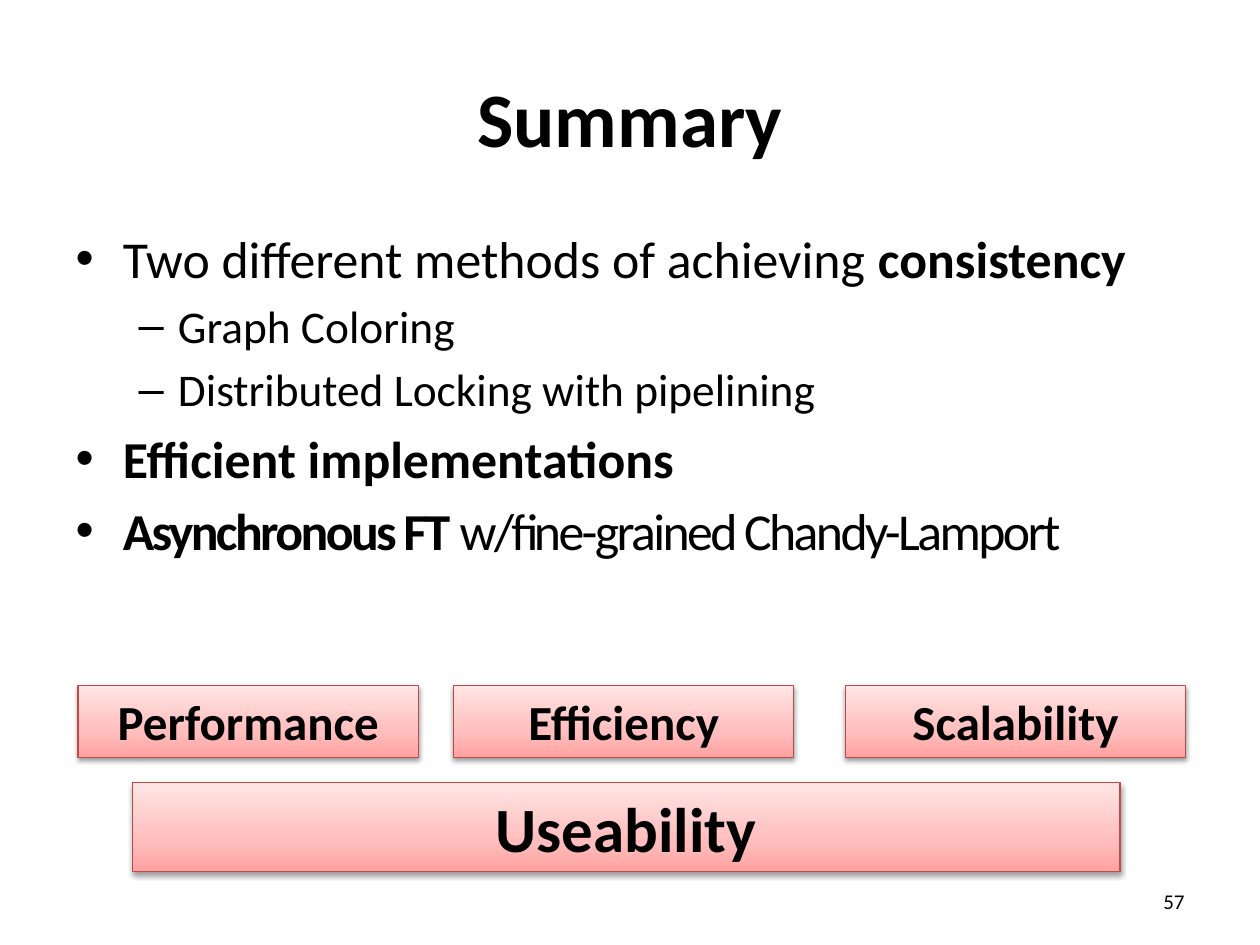
from copy import deepcopy

from lxml.etree import SubElement
from pptx import Presentation
from pptx.dml.color import RGBColor
from pptx.enum.shapes import MSO_SHAPE as Shape
from pptx.enum.text import MSO_ANCHOR as Anchor, MSO_AUTO_SIZE as AutoSize, PP_ALIGN as Align
from pptx.oxml.ns import qn
from pptx.util import Inches, Pt

BLACK = RGBColor(0x00, 0x00, 0x00)
RED = RGBColor(0xBE, 0x4B, 0x48)
GRADIENT = [
    (0, RGBColor(0xFF, 0xE5, 0xE5)),
    (0.65, RGBColor(0xFF, 0xBE, 0xBD)),
    (1, RGBColor(0xFF, 0xA2, 0xA1)),
]
BULLETS = [
    (0, [("Two different methods of achieving ", False), ("consistency", True)], 0),
    (1, [("Graph Coloring", False)], 0),
    (1, [("Distributed Locking with pipelining", False)], 0),
    (0, [("Efficient implementations", True)], 0),
    (0, [("Asynchronous FT ", True), ("w/fine-grained Chandy-Lamport", False)], -1.5),
]
LEVEL_SIZES = [29.6, 25.9]
GOALS = [("Performance", 0.62), ("Efficiency", 3.6), ("Scalability", 6.71)]


def place(sp, left, top, width, height):
    sp.left, sp.top = Inches(left), Inches(top)
    sp.width, sp.height = Inches(width), Inches(height)


def format_run(r, size, bold=False):
    r.font.name = "Calibri"
    r.font.size = Pt(size)
    r.font.bold = bold
    r.font.color.rgb = BLACK


def set_text(sp, text, size, align, bold=False):
    tf = sp.text_frame
    tf.text = text
    tf.word_wrap = True
    tf.vertical_anchor = Anchor.MIDDLE
    p = tf.paragraphs[0]
    p.alignment = align
    format_run(p.runs[0], size, bold)


def fill_bullets(sp):
    tf = sp.text_frame
    tf.auto_size = AutoSize.NONE
    for i, (level, parts, spacing) in enumerate(BULLETS):
        p = tf.add_paragraph() if i else tf.paragraphs[0]
        p.level = level
        for text, bold in parts:
            r = p.add_run()
            r.text = text
            format_run(r, LEVEL_SIZES[level], bold)
            if spacing:
                r.font._element.set("spc", str(int(spacing * 100)))


def add_gradient(sp):
    sp.fill.gradient()
    sp.fill.gradient_angle = 270
    stops = sp._element.spPr.find(".//" + qn("a:gsLst"))
    stops.append(deepcopy(stops[0]))
    for stop, (position, color) in zip(sp.fill.gradient_stops, GRADIENT):
        stop.position = position
        stop.color.rgb = color


def add_shadow(sp):
    sp.shadow.inherit = False
    effects = sp._element.spPr.find(qn("a:effectLst"))
    shadow = SubElement(effects, qn("a:outerShdw"), blurRad=str(Pt(3.1)),
                        dist=str(Pt(1.6)), dir="5400000", rotWithShape="0")
    color = SubElement(shadow, qn("a:srgbClr"), val=str(BLACK))
    SubElement(color, qn("a:alpha"), val="38000")


def add_box(slide, text, left, top, width, height, size):
    sp = slide.shapes.add_shape(Shape.RECTANGLE, Inches(left), Inches(top),
                                Inches(width), Inches(height))
    add_gradient(sp)
    sp.line.color.rgb = RED
    sp.line.width = Pt(0.75)
    add_shadow(sp)
    set_text(sp, text, size, Align.CENTER, True)


def add_page_number(slide, text):
    sp = slide.shapes.add_textbox(Inches(7.17), Inches(6.95), Inches(2.33), Inches(0.4))
    set_text(sp, text, 12, Align.RIGHT)


def main():
    prs = Presentation()
    prs.slide_width, prs.slide_height = Inches(10), Inches(7.5)
    slide = prs.slides.add_slide(prs.slide_layouts[1])

    title, body = slide.placeholders
    place(title, 0.5, 0.3, 9, 1.25)
    set_text(title, "Summary", 44, Align.CENTER, True)
    place(body, 0.5, 1.75, 9, 3.08)
    fill_bullets(body)

    add_page_number(slide, "57")
    for text, left in GOALS:
        add_box(slide, text, left, 5.44, 2.7, 0.57, 28)
    add_box(slide, "Useability", 1.05, 6.21, 7.84, 0.71, 36)

    prs.save("out.pptx")


if __name__ == "__main__":
    main()
